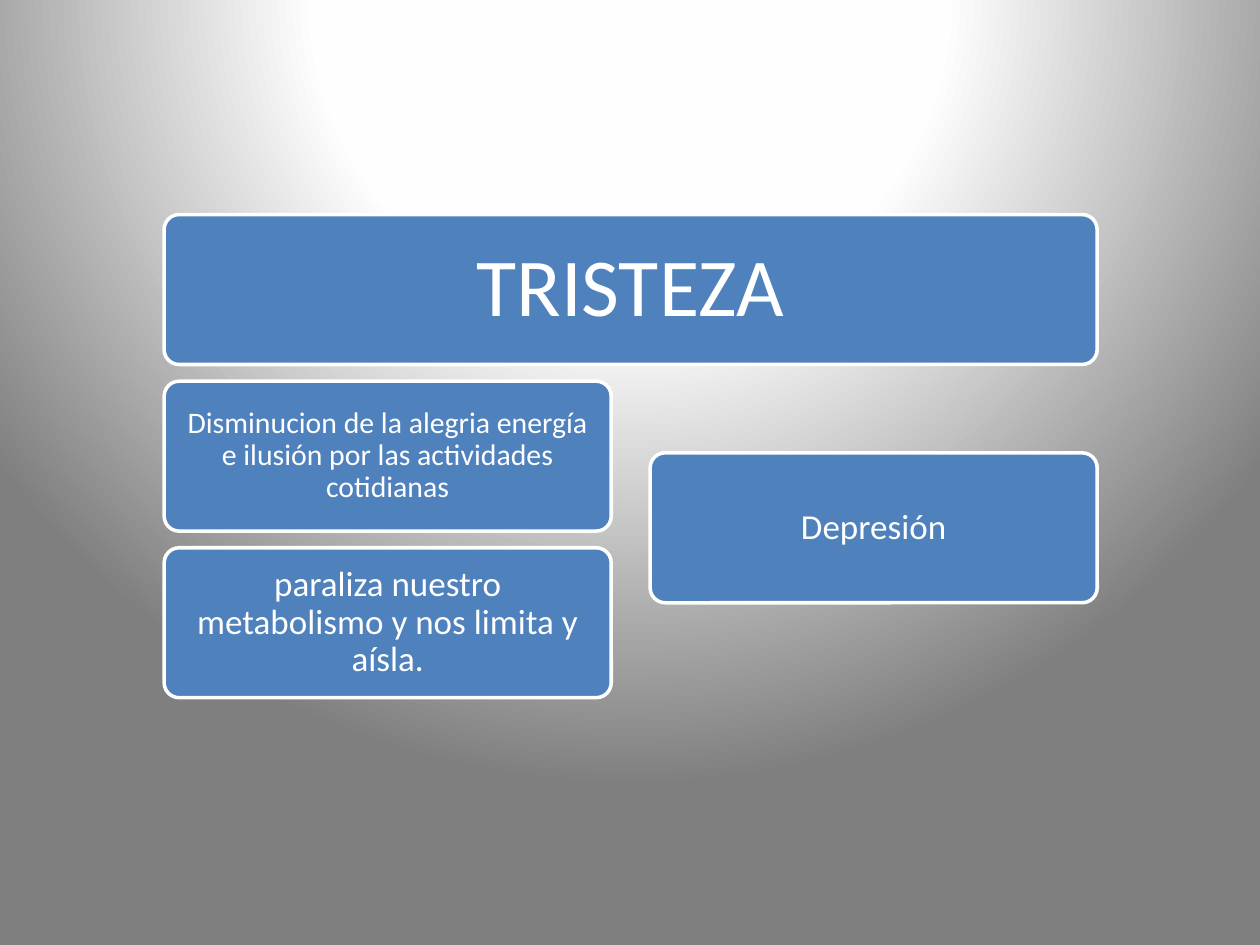
"""Build the TRISTEZA slide: a heading box over two columns of boxes."""
import pptx
import pptx.dml.color
import pptx.enum.shapes
import pptx.enum.text
import pptx.oxml
import pptx.oxml.ns
import pptx.util

Pt = pptx.util.Pt
RGB = pptx.dml.color.RGBColor.from_string
COLORS = {"box": "4F81BD", "white": "FFFFFF", "glow": "FEFEFE", "gray": "7F7F7F"}

LEFT, TOP = 93.8, 122.6
COL_W, COL_STEP = 255.5, 277.7
ROW_H, ROW_STEP = 85.7, 95.2


def add_box(s, text, col, row, width=COL_W, size=20):
    sp = s.shapes.add_shape(
        pptx.enum.shapes.MSO_SHAPE.ROUNDED_RECTANGLE,
        Pt(LEFT + col * COL_STEP), Pt(TOP + row * ROW_STEP), Pt(width), Pt(ROW_H))
    sp.adjustments[0] = 0.1
    sp.shadow.inherit = False
    sp.fill.solid()
    sp.fill.fore_color.rgb = RGB(COLORS["box"])
    sp.line.color.rgb = RGB(COLORS["white"])
    sp.line.width = Pt(2)
    tf = sp.text_frame
    tf.word_wrap = True
    tf.vertical_anchor = pptx.enum.text.MSO_ANCHOR.MIDDLE
    inset = Pt(0.3 * size)
    tf.margin_left = tf.margin_right = tf.margin_top = tf.margin_bottom = inset
    p = tf.paragraphs[0]
    p.alignment = pptx.enum.text.PP_ALIGN.CENTER
    p.line_spacing = 0.9
    r = p.add_run()
    r.text = text
    r.font.name = "Calibri"
    r.font.size = Pt(size)
    r.font.color.rgb = RGB(COLORS["white"])


prs = pptx.Presentation()
prs.slide_width, prs.slide_height = Pt(720), Pt(540)
s = prs.slides.add_slide(prs.slide_layouts[6])

s.background.fill.gradient()
grad = s.element.find(".//" + pptx.oxml.ns.qn("a:gradFill"))
stops = "".join(
    f'<a:gs pos="{pos * 1000}"><a:srgbClr val="{COLORS[name]}"/></a:gs>'
    for pos, name in [(0, "white"), (40, "glow"), (100, "gray")])
grad.getparent().replace(grad, pptx.oxml.parse_xml(
    f'<a:gradFill {pptx.oxml.ns.nsdecls("a")} rotWithShape="1"><a:gsLst>{stops}</a:gsLst>'
    '<a:path path="circle"><a:fillToRect l="50000" t="-80000" r="50000" b="180000"/>'
    '</a:path></a:gradFill>'))

add_box(s, "TRISTEZA", 0, 0, width=COL_STEP + COL_W, size=47)
add_box(s, "Disminucion de la alegria energía e ilusión por las actividades cotidianas",
        0, 1, size=17)
add_box(s, "paraliza nuestro metabolismo y nos limita y aísla.", 0, 2)
add_box(s, "Depresión", 1, 1.43)

prs.save("out.pptx")
